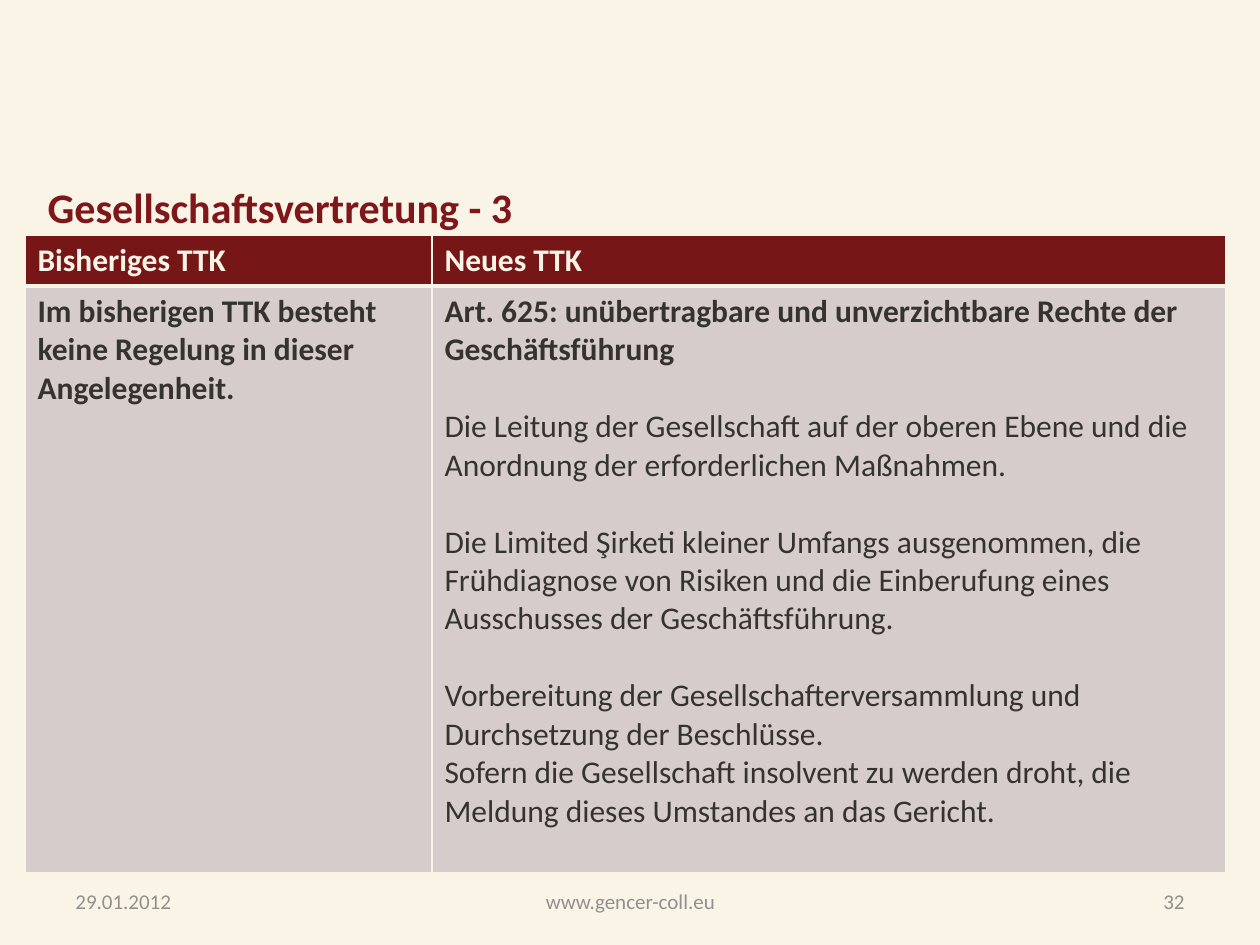
from lxml.etree import SubElement
from pptx import Presentation
from pptx.dml.color import RGBColor
from pptx.enum.text import MSO_ANCHOR as Anchor, MSO_AUTO_SIZE as AutoSize, PP_ALIGN as Align
from pptx.oxml.ns import qn
from pptx.util import Emu, Pt

CREAM = RGBColor(0xF9, 0xF4, 0xE6)
TITLE_RED = RGBColor(0x7E, 0x16, 0x1A)
HEADER_RED = RGBColor(0x76, 0x16, 0x17)
BODY_FILL = RGBColor(0xD6, 0xCC, 0xCC)
INK = RGBColor(0x35, 0x33, 0x30)
FOOTER_GREY = RGBColor(0x90, 0x90, 0x8F)
FONT = "Calibri"
BLANK_LINE = 22

HEADINGS = ["Bisheriges TTK", "Neues TTK"]
OLD_LAW = [("Im bisherigen TTK besteht keine Regelung in dieser Angelegenheit.", True, 0)]
NEW_LAW = [
    ("Art. 625: unübertragbare und unverzichtbare Rechte der Geschäftsführung", True, 0),
    ("Die Leitung der Gesellschaft auf der oberen Ebene und die", False, BLANK_LINE),
    ("Anordnung der erforderlichen Maßnahmen.", False, 0),
    ("Die Limited Şirketi kleiner Umfangs ausgenommen, die Frühdiagnose von Risiken "
     "und die Einberufung eines Ausschusses der Geschäftsführung.", False, BLANK_LINE),
    ("Vorbereitung der Gesellschafterversammlung und Durchsetzung der Beschlüsse.",
     False, BLANK_LINE),
    ("Sofern die Gesellschaft insolvent zu werden droht, die Meldung dieses Umstandes "
     "an das Gericht.", False, 0),
]
FOOTERS = [
    ("29.01.2012", 63, 294, Align.LEFT),
    ("www.gencer-coll.eu", 431, 399, Align.CENTER),
    ("32", 903, 294, Align.RIGHT),
]


def px(length):
    return Emu(round(length * 914400 / 126))


class SlideBuilder:
    """Holds the style and the current slide, and adds each kind of element."""

    def __init__(self, deck):
        self.slide = deck.slides.add_slide(deck.slide_layouts[5])
        fill = self.slide.background.fill
        fill.solid()
        fill.fore_color.rgb = CREAM

    def add_text(self, frame, paragraphs, size, color, align=Align.LEFT):
        for index, (text, bold, before) in enumerate(paragraphs):
            paragraph = frame.add_paragraph() if index else frame.paragraphs[0]
            paragraph.alignment = align
            paragraph.space_before = Pt(before)
            run = paragraph.add_run()
            run.text = text
            font = run.font
            font.name, font.size, font.bold = FONT, Pt(size), bold
            font.color.rgb = color

    def title(self, text, left, top, width, height):
        heading = self.slide.shapes.title
        heading.left, heading.top = px(left), px(top)
        heading.width, heading.height = px(width), px(height)
        frame = heading.text_frame
        frame.word_wrap = True
        frame.auto_size = AutoSize.NONE
        frame.vertical_anchor = Anchor.TOP
        self.add_text(frame, [(text, True, 0)], 24, TITLE_RED)

    def footer(self, text, left, width, align):
        box = self.slide.shapes.add_textbox(px(left), px(876), px(width), px(50))
        frame = box.text_frame
        frame.word_wrap = True
        frame.vertical_anchor = Anchor.MIDDLE
        self.add_text(frame, [(text, False, 0)], 12, FOOTER_GREY, align)

    def cell(self, cell, paragraphs, fill, color, top_line, bottom_line):
        properties = cell._tc.get_or_add_tcPr()
        for side, width in zip("LRTB", (1, 1, top_line, bottom_line)):
            line = SubElement(properties, qn(f"a:ln{side}"), w=str(Pt(width)))
            SubElement(SubElement(line, qn("a:solidFill")), qn("a:srgbClr"), val=str(CREAM))
        cell.fill.solid()
        cell.fill.fore_color.rgb = fill
        self.add_text(cell.text_frame, paragraphs, 18, color)

    def table(self, headings, bodies, left, top, widths, heights):
        table = self.slide.shapes.add_table(
            2, len(widths), px(left), px(top), px(sum(widths)), px(sum(heights))).table
        for row, height in zip(table.rows, heights):
            row.height = px(height)
        for index, (heading, body, width) in enumerate(zip(headings, bodies, widths)):
            table.columns[index].width = px(width)
            self.cell(table.cell(0, index), [(heading, True, 0)], HEADER_RED, CREAM, 1, 3)
            self.cell(table.cell(1, index), body, BODY_FILL, INK, 3, 1)


def main():
    deck = Presentation()
    deck.slide_width, deck.slide_height = px(1260), px(945)
    builder = SlideBuilder(deck)
    for footer in FOOTERS:
        builder.footer(*footer)
    builder.title("Gesellschaftsvertretung - 3", 35, 175, 992, 59)
    builder.table(HEADINGS, [OLD_LAW, NEW_LAW], 25, 235, [407, 794], [51, 587])
    deck.save("out.pptx")


if __name__ == "__main__":
    main()
